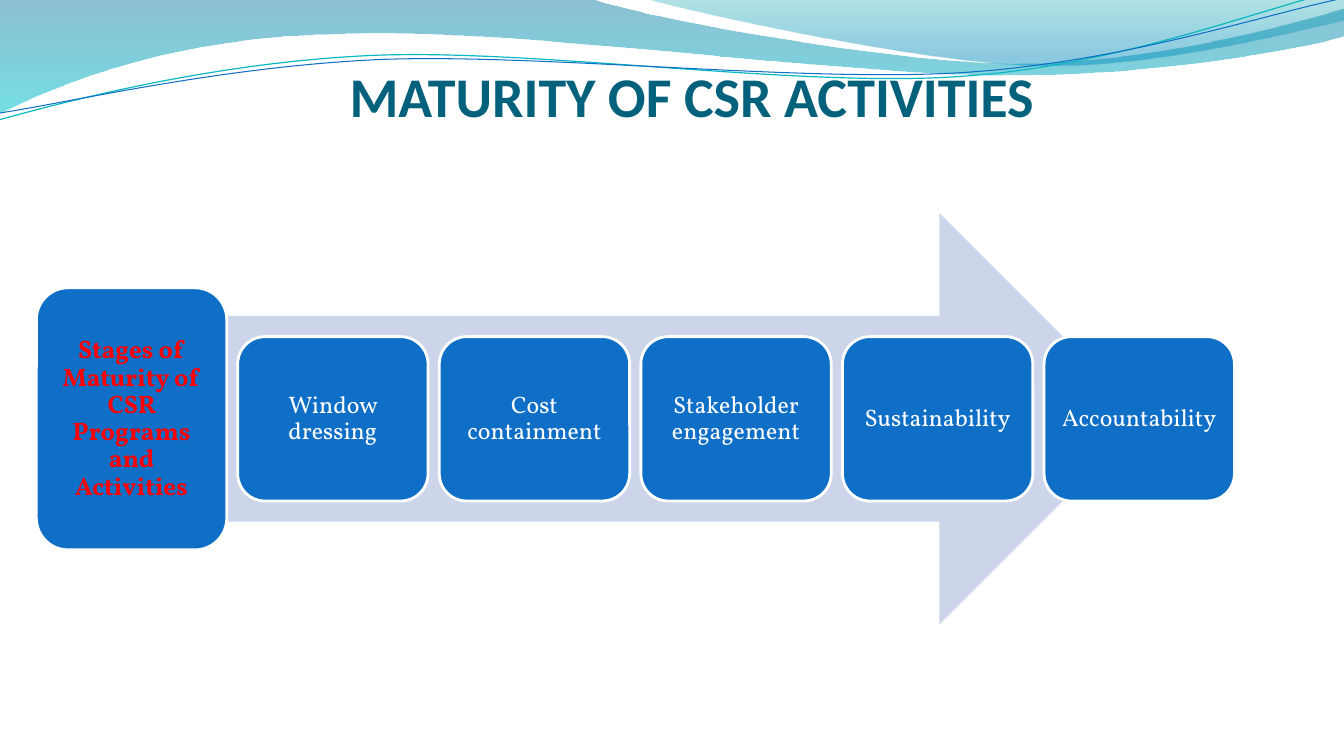
from lxml.etree import SubElement
from pptx import Presentation
from pptx.dml.color import RGBColor
from pptx.enum.shapes import MSO_SHAPE as Shape
from pptx.enum.text import MSO_ANCHOR as Anchor, PP_ALIGN as Align
from pptx.oxml.ns import qn
from pptx.util import Pt

COLORS = {
    "white": "FFFFFF", "blue": "0F6FC6", "title": "04617B", "red": "FF0000",
    "arrow": "CCD5EA", "teal line": "0AB8BF", "deep blue": "0074A1",
    "cyan": "00C6CF", "teal": "00A1A9", "sky": "008BBF",
}


def color(name):
    return RGBColor.from_string(COLORS[name])


def write(shape, text, size, font, color_name, bold, anchor, insets):
    frame = shape.text_frame
    frame.word_wrap = True
    frame.vertical_anchor = anchor
    (frame.margin_left, frame.margin_top,
     frame.margin_right, frame.margin_bottom) = [Pt(inset) for inset in insets]
    para = frame.paragraphs[0]
    para.text = text
    para.alignment = Align.CENTER
    para.font.size = Pt(size)
    para.font.name = font
    para.font.bold = bold
    para.font.color.rgb = color(color_name)
    return para


deck = Presentation()
deck.slide_width, deck.slide_height = Pt(960), Pt(540)
page = deck.slides.add_slide(deck.slide_layouts[6])

# Header waves: a step of one point is a line, of three points a cubic curve.
# Gradient stops are (position, colour, opacity %).
waves = [
    {"start": (0, 0),
     "steps": [[(422.6, -0.7)],
               [(456.5, 12.2), (637.2, 45.4), (727.9, 45.4)],
               [(819.4, 45.4), (920.2, 18.7), (959.8, 6.5)],
               [(961.2, 25.9)],
               [(943.9, 31.7), (835.2, 54.7), (715.7, 54)],
               [(596.9, 54), (366.5, 20.2), (247, 24.5)],
               [(123.8, 25.9), (43.9, 59.8), (-0.7, 81.4)]],
     "stops": [(0, "deep blue", 45), (1, "cyan", 55)]},
    {"start": (460.1, -0.7),
     "steps": [[(488.9, 7.9), (654.5, 44.6), (738, 46.8)],
               [(821.5, 49.7), (923, 23), (959.8, 15.1)],
               [(959.8, 0)]],
     "stops": [(0, "teal", 30), (0.8, "sky", 45)]},
    {"start": (-2.3, 63),
     "steps": [[(45.1, 52.3), (152.1, 29.2), (266, 29.6)],
               [(379.9, 29.9), (567.7, 66.9), (683.1, 64.4)],
               [(798.6, 62.6), (902.6, 25.7), (960.1, 15.5)]],
     "line": ("teal line", 0.85)},
    {"start": (-1.3, 58),
     "steps": [[(44.4, 53.6), (157.1, 32.3), (272.4, 32.7)],
               [(386.9, 33.8), (572.3, 63.4), (687, 61.6)],
               [(802.4, 59.8), (904.6, 30), (962.1, 21.2)]],
     "line": ("blue", 0.75)},
]
for wave in waves:
    points = [(Pt(x), Pt(y)) for step in wave["steps"] for x, y in step]
    start_x, start_y = wave["start"]
    builder = page.shapes.build_freeform(Pt(start_x), Pt(start_y), scale=1.0)
    builder.add_line_segments(points, close="stops" in wave)
    ribbon = builder.convert_to_shape()
    ribbon.shadow.inherit = False

    # Join each three segments of a curve into one cubic segment
    segments = iter(list(ribbon._element.iter(qn("a:lnTo"))))
    for step in wave["steps"]:
        parts = [next(segments) for point in step]
        if len(parts) == 3:
            curve = parts[0].makeelement(qn("a:cubicBezTo"))
            parts[0].addprevious(curve)
            for part in parts:
                curve.append(part[0])
                part.getparent().remove(part)

    if "stops" in wave:
        ribbon.line.fill.background()
        ribbon.fill.gradient()
        ribbon.fill.gradient_angle = 270
        for stop, (position, name, opacity) in zip(ribbon.fill.gradient_stops, wave["stops"]):
            stop.position = position
            stop.color.rgb = color(name)
        shades = ribbon.fill._xPr.iter(qn("a:srgbClr"))
        for shade, (position, name, opacity) in zip(shades, wave["stops"]):
            SubElement(shade, qn("a:alpha")).set("val", str(opacity * 1000))
    else:
        name, width = wave["line"]
        ribbon.rotation = 357.3
        ribbon.fill.background()
        ribbon.line.color.rgb = color(name)
        ribbon.line.width = Pt(width)

# Title
title = page.shapes.add_textbox(Pt(53.5), Pt(26.9), Pt(881.3), Pt(64.8))
write(title, "MATURITY OF CSR ACTIVITIES", 40, "Calibri", "title", True,
      Anchor.BOTTOM, (0, 3.6, 0, 0))

# Arrow behind the stages
arrow = page.shapes.add_shape(Shape.RIGHT_ARROW, Pt(90), Pt(152.2), Pt(728), Pt(293.8))
arrow.shadow.inherit = False
arrow.fill.solid()
arrow.fill.fore_color.rgb = color("arrow")
arrow.line.fill.background()

# Heading box, then the five stages at equal steps, all on one centre line
BOX_WIDTH, CENTER_Y = 136, 299.2
stages = ["Window dressing", "Cost containment", "Stakeholder engagement",
          "Sustainability", "Accountability"]
boxes = [("Stages of Maturity of CSR Programs and Activities", 26, 187.2, 18, "red", True)]
boxes += [(stage, 169.8 + 144 * i, 117.4, 17, "white", False)
          for i, stage in enumerate(stages)]
for text, left, height, size, text_color, bold in boxes:
    box = page.shapes.add_shape(Shape.ROUNDED_RECTANGLE, Pt(left), Pt(CENTER_Y - height / 2),
                                Pt(BOX_WIDTH), Pt(height))
    box.shadow.inherit = False
    box.fill.solid()
    box.fill.fore_color.rgb = color("blue")
    box.line.color.rgb = color("white")
    box.line.width = Pt(2)
    para = write(box, text, size, "Vollkorn", text_color, bold, Anchor.MIDDLE, (5, 5, 5, 5))
    para.line_spacing = 0.9

deck.save("out.pptx")
